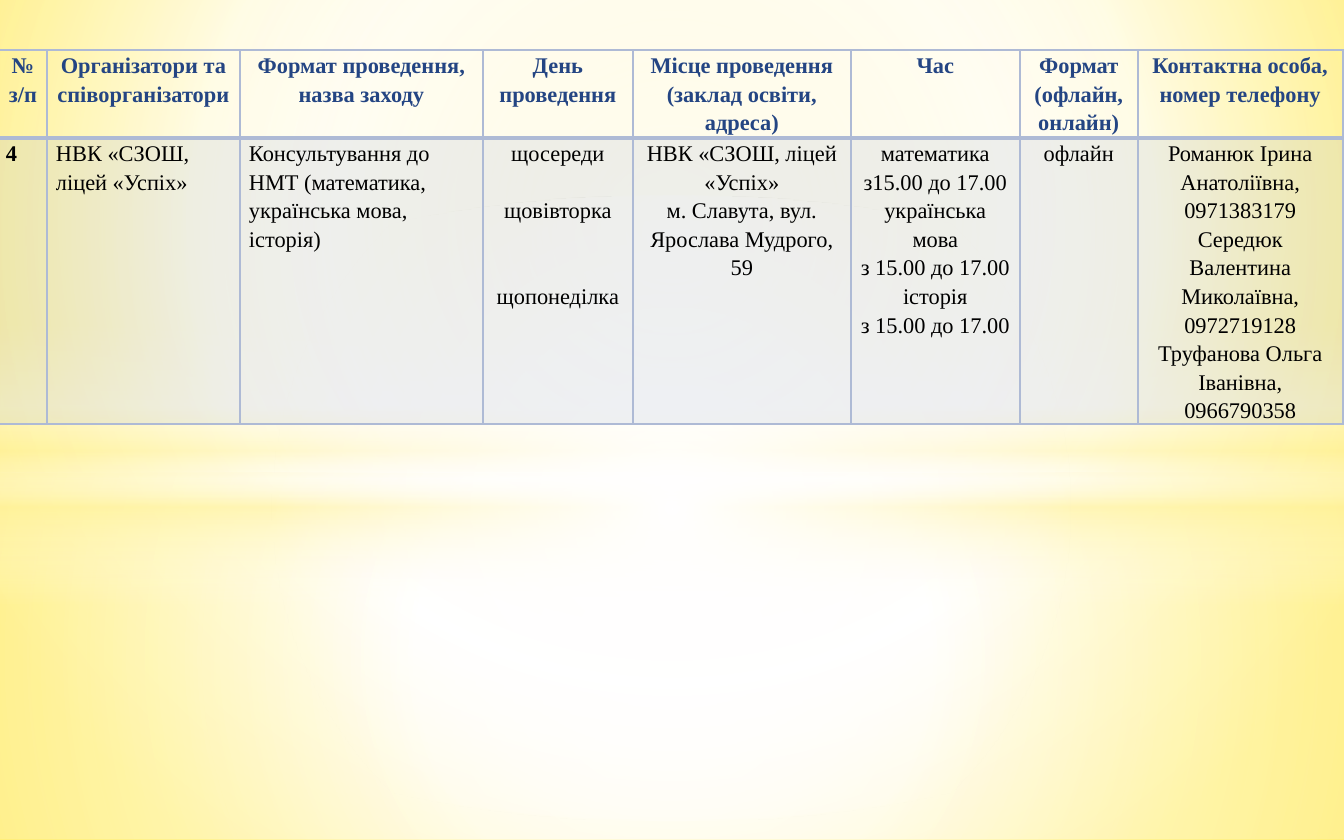
from lxml import etree
from pptx import Presentation
from pptx import util as u
from pptx.dml.color import RGBColor
from pptx.enum import shapes, text
from pptx.oxml import parse_xml
from pptx.oxml.ns import nsdecls, qn

SCALE = 9144000 / 1344  # EMU in one px

THEME = {
    "font": "Times New Roman",
    "size": u.Pt(12),
    "line_spacing": 1.15,
    "header": RGBColor.from_string("244583"),
    "body": RGBColor.from_string("000000"),
    "grid": "AEBAD5",
    "white": "FFFFFF",
    "pale": "FFF39D",
    "edge": "FFF18D",
    "corner": "FFE94E",
}
CENTRE = (50, 50, 50, 50)


def px(length):
    return u.Emu(round(length * SCALE))


def set_gradient(fill, parent, stops, focus=None):
    """Fill with (position, colour, opacity) stops: round with a focus, else downwards."""
    fill.gradient()
    stop_xml = "".join(
        f'<a:gs pos="{position * 1000}"><a:srgbClr val="{THEME[colour]}">'
        f'<a:alpha val="{opacity * 1000}"/></a:srgbClr></a:gs>'
        for position, colour, opacity in stops)
    if focus:
        sides = " ".join(f'{side}="{value * 1000}"' for side, value in zip("ltrb", focus))
        direction = f'<a:path path="circle"><a:fillToRect {sides}/></a:path>'
    else:
        direction = '<a:lin ang="5400000" scaled="0"/>'
    old = parent.find(".//" + qn("a:gradFill"))
    old.getparent().replace(old, parse_xml(
        f'<a:gradFill {nsdecls("a")} rotWithShape="1"><a:gsLst>{stop_xml}</a:gsLst>'
        f'{direction}</a:gradFill>'))


presentation = Presentation()
presentation.slide_width, presentation.slide_height = px(1344), px(840)
slide = presentation.slides.add_slide(presentation.slide_layouts[6])

# Background
set_gradient(slide.background.fill, slide.element,
             [(0, "edge", 100), (60, "white", 100), (100, "corner", 100)], (20, 10, 20, 60))

# Light glows over the background
RECTANGLE, OVAL = shapes.MSO_SHAPE.RECTANGLE, shapes.MSO_SHAPE.OVAL
glows = [
    (RECTANGLE, 473, 367, [(0, "white", 91), (37, "white", 76), (100, "pale", 79)], CENTRE),
    (RECTANGLE, 0, 473, [(0, "white", 89), (48, "white", 62), (100, "pale", 79)], CENTRE),
    (RECTANGLE, 325, 280, [(0, "white", 0), (29, "white", 30), (45, "pale", 40),
                           (55, "white", 26), (65, "pale", 60), (100, "white", 0)], None),
    (OVAL, 196, 625, [(0, "white", 100), (54, "white", 0)], CENTRE),
]
for kind, top, height, stops, focus in glows:
    shape = slide.shapes.add_shape(kind, 0, px(top), px(1344), px(height))
    shape.shadow.inherit = False
    shape.line.fill.background()
    set_gradient(shape.fill, shape.element, stops, focus)

# Schedule: heading and entry of each column, with width and entry alignment
LEFT, MIDDLE = text.PP_ALIGN.LEFT, text.PP_ALIGN.CENTER
columns = [
    (48, LEFT, ["№", "з/п"], ["4"]),
    (193, LEFT, ["Організатори та співорганізатори"], ["НВК «СЗОШ, ліцей «Успіх»"]),
    (243, LEFT, ["Формат проведення, назва заходу"],
     ["Консультування до НМТ (математика, українська мова, історія)"]),
    (150, MIDDLE, ["День проведення"], ["щосереди", "щовівторка", "щопонеділка"]),
    (218, MIDDLE, ["Місце проведення", "(заклад освіти, адреса)"],
     ["НВК «СЗОШ, ліцей «Успіх»", "м. Славута, вул. Ярослава Мудрого, 59"]),
    (169, MIDDLE, ["Час"],
     ["математика", "з15.00 до 17.00", "українська мова", "з 15.00 до 17.00",
      "історія", "з 15.00 до 17.00"]),
    (118, MIDDLE, ["Формат", "(офлайн, онлайн)"], ["офлайн"]),
    (205, MIDDLE, ["Контактна особа,", "номер телефону"],
     ["Романюк Ірина Анатоліївна, 0971383179",
      "Середюк Валентина Миколаївна, 0972719128",
      "Труфанова Ольга Іванівна, 0966790358"]),
]
# Each day lines up with its subject in the time column
space_before = {"щовівторка": u.Pt(15.3), "щопонеділка": u.Pt(30.6)}
row_heights = [88, 285]

table = slide.shapes.add_table(2, len(columns), px(-1), px(50), px(1344),
                               px(sum(row_heights))).table
table.first_row = table.horz_banding = False
for row, height in zip(table.rows, row_heights):
    row.height = px(height)

for column_index, (width, alignment, heading, entry) in enumerate(columns):
    table.columns[column_index].width = px(width)
    for row_index, lines in enumerate((heading, entry)):
        is_header = row_index == 0
        cell = table.cell(row_index, column_index)
        side_margin = px(7 if is_header or column_index == 0 else 9)
        cell.margin_left = cell.margin_right = side_margin
        cell.margin_top = cell.margin_bottom = 0

        # Text
        for line_index, line in enumerate(lines):
            frame = cell.text_frame
            paragraph = frame.add_paragraph() if line_index else frame.paragraphs[0]
            paragraph.alignment = MIDDLE if is_header else alignment
            paragraph.line_spacing = THEME["line_spacing"]
            if line in space_before:
                paragraph.space_before = space_before[line]
            run = paragraph.add_run()
            run.text = line
            run.font.name, run.font.size = THEME["font"], THEME["size"]
            run.font.bold = is_header or column_index == 0
            run.font.color.rgb = THEME["header"] if is_header else THEME["body"]

        # Fill
        properties = cell._tc.get_or_add_tcPr()
        if is_header:
            cell.fill.background()
        else:
            cell.fill.solid()
            cell.fill.fore_color.rgb = RGBColor.from_string(THEME["grid"])
            colour = properties.find(".//" + qn("a:srgbClr"))
            etree.SubElement(colour, qn("a:alpha")).set("val", "20000")

        # Borders, heavier between the two rows
        heavy_side = "B" if is_header else "T"
        for position, side in enumerate("LRTB"):
            weight = u.Pt(2 if side == heavy_side else 1)
            properties.insert(position, parse_xml(
                f'<a:ln{side} {nsdecls("a")} w="{weight}"><a:solidFill>'
                f'<a:srgbClr val="{THEME["grid"]}"/></a:solidFill></a:ln{side}>'))

presentation.save("out.pptx")
